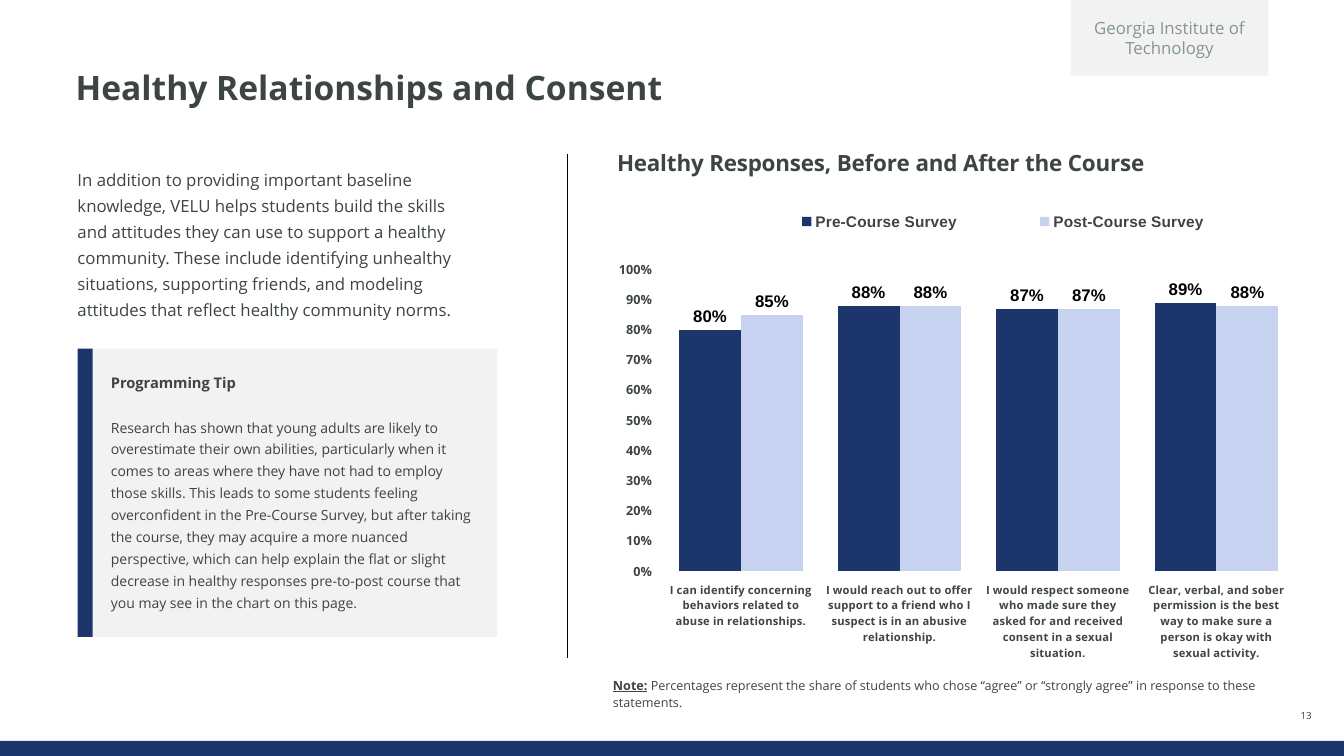
"""Build the Healthy Relationships and Consent survey slide."""
from lxml.etree import SubElement
from pptx import Presentation
from pptx.chart.data import CategoryChartData as ChartData
from pptx.dml.color import RGBColor as Rgb
from pptx.enum.chart import XL_CHART_TYPE as Kind
from pptx.enum.chart import XL_LABEL_POSITION as Spot
from pptx.enum.chart import XL_LEGEND_POSITION as Side
from pptx.enum.shapes import MSO_CONNECTOR as Link
from pptx.enum.shapes import MSO_SHAPE as Form
from pptx.enum.text import MSO_ANCHOR as Anchor
from pptx.enum.text import PP_ALIGN as Align
from pptx.oxml import parse_xml
from pptx.oxml.ns import qn
from pptx.util import Inches, Pt

HEX = {
    "navy": "1C366B", "sky": "C6D2EF", "gray": "F2F2F2", "ink": "3C4543",
    "slate": "3D4543", "sage": "859591", "black": "000000",
}
CHART_NS = "http://schemas.openxmlformats.org/drawingml/2006/chart"

INTRO = (
    "In addition to providing important baseline knowledge, VELU helps students "
    "build the skills and attitudes they can use to support a healthy community. "
    "These include identifying unhealthy situations, supporting friends, and "
    "modeling attitudes that reflect healthy community norms."
)
TIP = (
    "Research has shown that young adults are likely to overestimate their own "
    "abilities, particularly when it comes to areas where they have not had to "
    "employ those skills. This leads to some students feeling overconfident in the "
    "Pre-Course Survey, but after taking the course, they may acquire a more "
    "nuanced perspective, which can help explain the flat or slight decrease in "
    "healthy responses pre-to-post course that you may see in the chart on this page."
)
NOTE = (
    " Percentages represent the share of students who chose “agree” or “strongly "
    "agree” in response to these statements."
)
CATS = [
    "I can identify concerning behaviors related to abuse in relationships.",
    "I would reach out to offer support to a friend who I suspect is in an abusive "
    "relationship.",
    "I would respect someone who made sure they asked for and received consent in a "
    "sexual situation.",
    "Clear, verbal, and sober permission is the best way to make sure a person is "
    "okay with sexual activity.",
]
SURVEYS = [
    ("Pre-Course Survey", (0.80, 0.88, 0.87, 0.89), "navy"),
    ("Post-Course Survey", (0.85, 0.88, 0.87, 0.88), "sky"),
]


def color(key):
    return Rgb.from_string(HEX[key])


def style(font, size, key="ink", bold=False, face="Open Sans"):
    font.name, font.size, font.bold = face, Pt(size), bold
    font.color.rgb = color(key)


def frame(shape, pad=(0, 0), anchor=Anchor.TOP):
    """Prepare a text frame; pad holds the side and the top inset."""
    text = shape.text_frame
    text.word_wrap = True
    text.vertical_anchor = anchor
    text.margin_left = text.margin_right = Inches(pad[0])
    text.margin_top = text.margin_bottom = Inches(pad[1])
    return text


def write(para, words, size, key="ink", bold=False, lead=None, after=0,
          align=Align.LEFT):
    para.text = words
    para.alignment = align
    para.line_spacing = lead
    para.space_after = Pt(after)
    style(para.font, size, key, bold)


def add_box(slide, at, **look):
    """Add a text box and return its frame."""
    return frame(slide.shapes.add_textbox(*map(Inches, at)), **look)


def add_rect(slide, at, key):
    rect = slide.shapes.add_shape(Form.RECTANGLE, *map(Inches, at))
    rect.shadow.inherit = False
    rect.fill.solid()
    rect.fill.fore_color.rgb = color(key)
    rect.line.fill.background()
    return rect


def add_rule(slide, x, top, end):
    rule = slide.shapes.add_connector(
        Link.STRAIGHT, Inches(x), Inches(top), Inches(x), Inches(end))
    rule.line.color.rgb = color("black")
    rule.line.width = Pt(1)
    SubElement(rule._element.spPr, qn("a:effectLst"))


def place(node, index, inner=False, **spots):
    """Give a chart part a manual layout in fractions of the chart."""
    for old in node.findall(qn("c:layout")):
        node.remove(old)
    target = '<c:layoutTarget val="inner"/>' if inner else ""
    modes = "".join(f'<c:{k}Mode val="edge"/>' for k in "xy")
    sizes = "".join(f'<c:{k} val="{v}"/>' for k, v in spots.items())
    node.insert(index, parse_xml(
        f'<c:layout xmlns:c="{CHART_NS}"><c:manualLayout>'
        f"{target}{modes}{sizes}</c:manualLayout></c:layout>"))


def add_bars(slide, at):
    data = ChartData(number_format="0%")
    data.categories = CATS
    for name, vals, _ in SURVEYS:
        data.add_series(name, vals)
    chart = slide.shapes.add_chart(
        Kind.COLUMN_CLUSTERED, *map(Inches, at), data).chart
    style(chart.font, 8, face="Lato")

    title = chart.chart_title
    head = title.text_frame.paragraphs[0]
    head.text = "Healthy Responses, Before and After the Course"
    style(head.runs[0].font, 16, bold=True)
    place(title._element, 1, x=0, y=0)

    chart.has_legend = True
    legend = chart.legend
    legend.position = Side.TOP
    legend.include_in_layout = False
    style(legend.font, 11, bold=True, face="Arial")
    place(legend._element, 1, x=0.16, y=0.12, w=0.8, h=0.06)

    for axis, size in ((chart.category_axis, 8), (chart.value_axis, 9)):
        style(axis.tick_labels.font, size, "slate", True)
        axis.format.line.fill.background()
        axis.has_major_gridlines = False
    scale = chart.value_axis
    scale.minimum_scale, scale.maximum_scale, scale.major_unit = 0, 1, 0.1
    scale.tick_labels.number_format = "0%"
    scale.tick_labels.number_format_is_linked = False

    plot = chart.plots[0]
    plot.gap_width, plot.overlap = 56, 0
    plot.vary_by_categories = False
    for bars, (_, _, key) in zip(plot.series, SURVEYS):
        bars.format.fill.solid()
        bars.format.fill.fore_color.rgb = color(key)
        tags = bars.data_labels
        tags.show_value = True
        tags.position = Spot.OUTSIDE_END
        tags.number_format = "0%"
        tags.number_format_is_linked = False
        style(tags.font, 12, "black", True, "Arial")
    place(chart._chartSpace.chart.plotArea, 0, inner=True,
          x=0.07, y=0.24, w=0.91, h=0.57)


def add_tip(slide):
    card = add_rect(slide, (0.85, 3.46, 4.08, 2.86), "gray")
    text = frame(card, (0.25, 0), Anchor.MIDDLE)
    write(text.paragraphs[0], "Programming Tip", 10.5, bold=True,
          lead=Pt(12), after=16)
    write(text.add_paragraph(), TIP, 10, lead=1.3, after=2)
    add_rect(slide, (0.77, 3.46, 0.15, 2.86), "navy")


def add_note(slide):
    text = add_box(slide, (6.08, 6.64, 6.5, 0.4), anchor=Anchor.BOTTOM)
    para = text.paragraphs[0]
    write(para, "", 9, "slate", lead=Pt(12), after=2)
    label = para.add_run()
    label.text = "Note:"
    label.font.bold = label.font.underline = True
    para.add_run().text = NOTE


def main():
    deck = Presentation()
    deck.slide_width, deck.slide_height = Inches(13.33), Inches(7.5)
    slide = deck.slides.add_slide(deck.slide_layouts[6])

    add_rect(slide, (0, 7.35, 13.33, 0.15), "navy")
    title = add_box(slide, (0.75, 0.71, 11.83, 0.7))
    write(title.paragraphs[0], "Healthy Relationships and Consent", 24,
          bold=True, lead=0.9)
    add_note(slide)
    page = add_box(slide, (12.7, 7.01, 0.51, 0.15), anchor=Anchor.BOTTOM)
    write(page.paragraphs[0], "13", 7, align=Align.CENTER)
    add_bars(slide, (6.08, 1.41, 6.91, 5.26))
    intro = add_box(slide, (0.67, 1.57, 4.08, 2.06), pad=(0.1, 0.05))
    write(intro.paragraphs[0], INTRO, 12, lead=1.3, after=2)
    add_tip(slide)
    add_rule(slide, 5.63, 1.53, 6.53)
    badge = add_rect(slide, (10.62, 0, 1.96, 0.75), "gray")
    write(frame(badge, (0.1, 0), Anchor.MIDDLE).paragraphs[0],
          "Georgia Institute of Technology", 12, "sage", align=Align.CENTER)
    deck.save("out.pptx")


if __name__ == "__main__":
    main()
